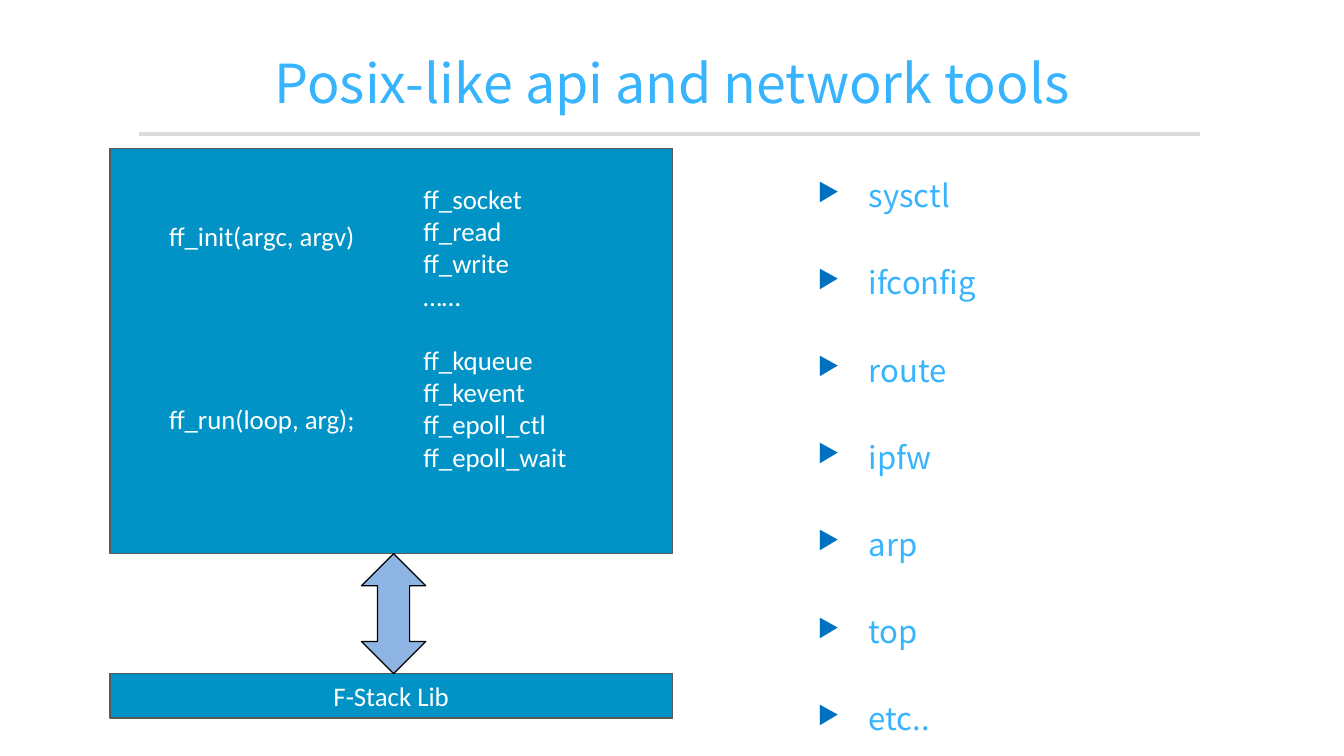
import pptx
import pptx.dml.color
import pptx.enum.shapes
import pptx.enum.text
import pptx.oxml
import pptx.oxml.ns
import pptx.util
from lxml import etree

Cm = pptx.util.Cm
Pt = pptx.util.Pt
Align = pptx.enum.text.PP_ALIGN
Anchor = pptx.enum.text.MSO_ANCHOR
Preset = pptx.enum.shapes.MSO_SHAPE


def color(value):
    return pptx.dml.color.RGBColor.from_string(value)


class SlideBuilder:
    heading_font = "Noto Sans CJK SC"
    body_font = "Calibri"
    accent = "38B4FE"
    panel = "0193C5"
    border = "595959"
    bullet = "0070C0"

    def __init__(self, presentation):
        self.slide = presentation.slides.add_slide(presentation.slide_layouts[6])

    def rule(self, left, right, top):
        connector = self.slide.shapes.add_connector(
            pptx.enum.shapes.MSO_CONNECTOR.STRAIGHT, Cm(left), Cm(top), Cm(right), Cm(top))
        connector.line.color.rgb = color("DCDCDC")
        connector.line.width = Pt(2.25)
        etree.SubElement(connector._element.spPr, pptx.oxml.ns.qn("a:effectLst"))

    def shape(self, preset, box, fill, line=None, width=1):
        shape = self.slide.shapes.add_shape(preset, *map(Cm, box))
        shape.shadow.inherit = False
        shape.fill.solid()
        shape.fill.fore_color.rgb = color(fill)
        if line:
            shape.line.color.rgb = color(line)
            shape.line.width = Pt(width)
        else:
            shape.line.fill.background()
        return shape

    def paragraph(self, frame, index, text, size, font, text_color, align):
        paragraph = frame.paragraphs[0] if index == 0 else frame.add_paragraph()
        paragraph.alignment = align
        run = paragraph.add_run()
        run.text = text
        run.font.size = Pt(size)
        run.font.name = font
        run.font.color.rgb = color(text_color)
        return paragraph

    def panel_text(self, box, groups, align=Align.LEFT, line=None):
        frame = self.shape(Preset.RECTANGLE, box, self.panel, line).text_frame
        frame.word_wrap = True
        frame.vertical_anchor = Anchor.MIDDLE
        index = 0
        for group in groups:
            for position, text in enumerate(group):
                paragraph = self.paragraph(
                    frame, index, text, 16, self.body_font, "FFFFFF", align)
                paragraph.line_spacing = Pt(19.2)
                if index and position == 0:
                    paragraph.space_before = Pt(19.2)
                index += 1

    def text_box(self, box):
        frame = self.slide.shapes.add_textbox(*map(Cm, box)).text_frame
        frame.word_wrap = True
        return frame

    def title(self, box, text):
        frame = self.text_box(box)
        frame.vertical_anchor = Anchor.MIDDLE
        self.paragraph(frame, 0, text, 32, self.heading_font, self.accent, Align.CENTER)

    def bullets(self, box, items):
        frame = self.text_box(box)
        frame.margin_top = 0
        for index, text in enumerate(items):
            paragraph = self.paragraph(
                frame, index, text, 18.5, self.heading_font, self.accent, Align.LEFT)
            paragraph.line_spacing = Pt(26)
            paragraph.space_after = Pt(25.9)
            properties = paragraph._p.get_or_add_pPr()
            properties.set("marL", str(Cm(1.07)))
            properties.set("indent", str(-Cm(1.07)))
            namespace = pptx.oxml.ns.nsdecls("a")
            for xml in (
                f'<a:buClr {namespace}><a:srgbClr val="{self.bullet}"/></a:buClr>',
                f'<a:buSzPct {namespace} val="80000"/>',
                f'<a:buChar {namespace} char="▶"/>',
            ):
                properties.append(pptx.oxml.parse_xml(xml))


def main():
    presentation = pptx.Presentation()
    presentation.slide_width = Cm(28.22)
    presentation.slide_height = Cm(15.88)
    builder = SlideBuilder(presentation)

    builder.rule(2.92, 25.2, 2.82)
    builder.title((1.42, 0.76, 25.4, 1.91), "Posix-like api and network tools")

    builder.shape(Preset.RECTANGLE, (2.31, 3.12, 11.81, 8.51), builder.panel, builder.border)
    builder.panel_text((2.31, 14.15, 11.81, 0.94), [["F-Stack Lib"]],
                       Align.CENTER, builder.border)
    for top, call in ((3.78, "ff_init(argc, argv)"), (7.62, "ff_run(loop, arg);")):
        builder.panel_text((3.3, top, 4.78, 2.36), [[call]])
    builder.panel_text((8.64, 3.78, 4.78, 6.2), [
        ["ff_socket", "ff_read", "ff_write", "……"],
        ["ff_kqueue", "ff_kevent", "ff_epoll_ctl", "ff_epoll_wait"],
    ])
    builder.shape(Preset.UP_DOWN_ARROW, (7.59, 11.63, 1.35, 2.52), "8EB4E3", "000000", 0.75)

    builder.bullets((16.92, 3.58, 6.63, 11.05),
                    ["sysctl", "ifconfig", "route", "ipfw", "arp", "top", "etc.."])
    presentation.save("out.pptx")


if __name__ == "__main__":
    main()
